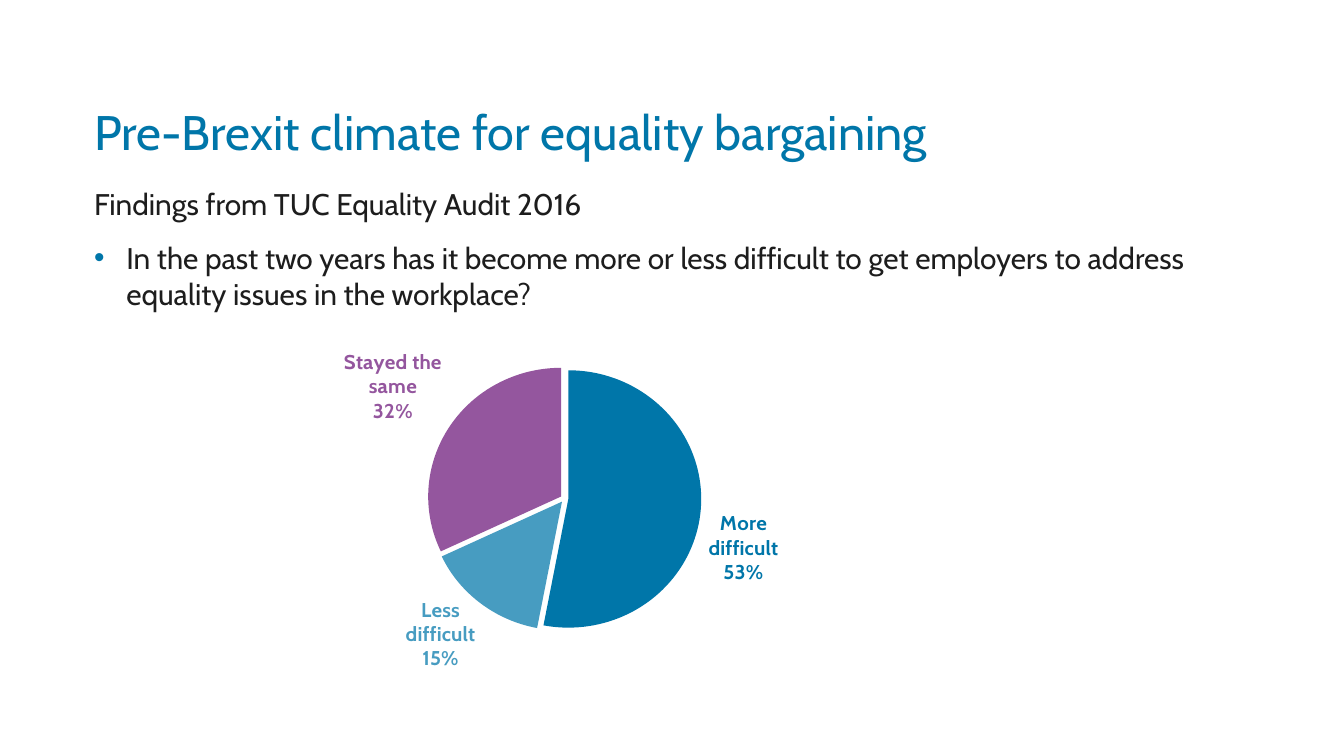
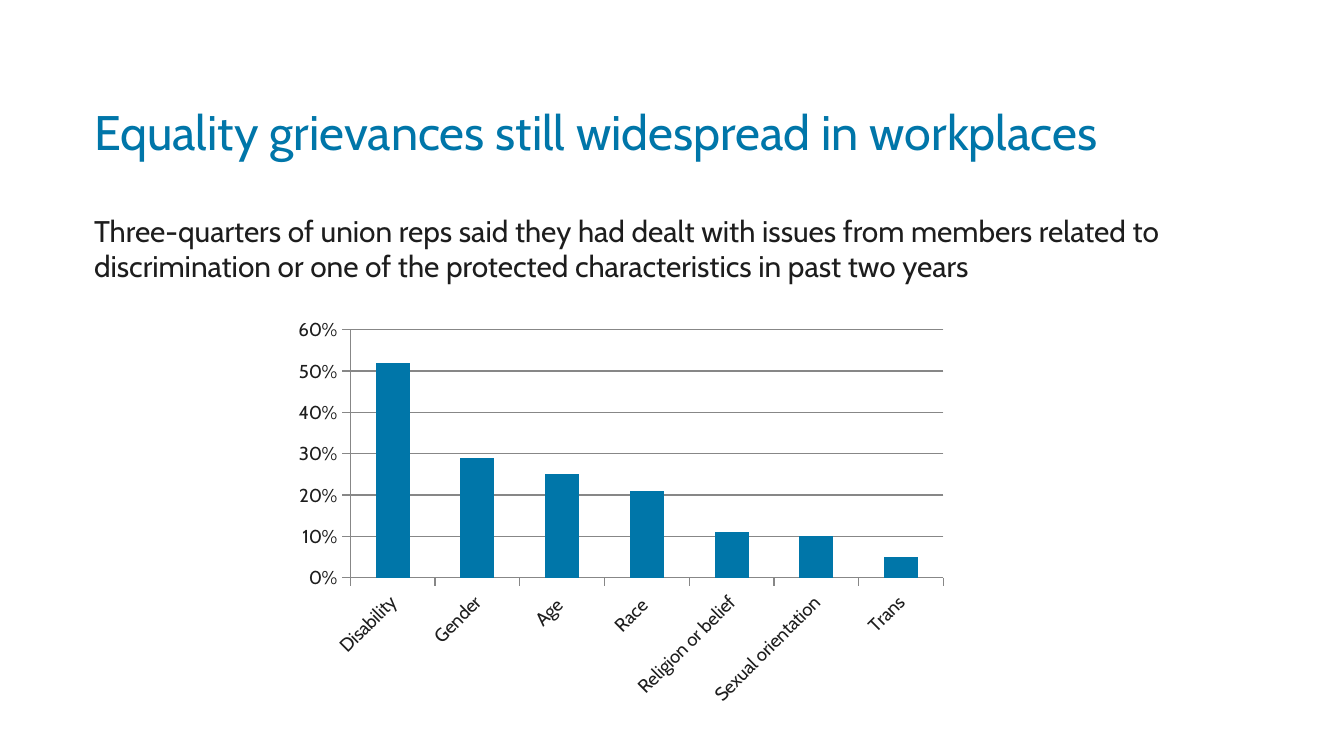
from dataclasses import dataclass
from typing import Any

import pptx
import pptx.chart.data
import pptx.dml.color
import pptx.enum.chart
import pptx.enum.text
import pptx.oxml
import pptx.oxml.ns
import pptx.util

FONT = "Cabin"
BLUE, SKY, PURPLE = "0076A9", "479CC1", "94569E"
INK, GREY, WHITE = "1D1D1D", "878787", "FFFFFF"

SLIDE_WIDTH = pptx.util.Inches(10)
SLIDE_HEIGHT = SLIDE_WIDTH * 9 // 16
CELL = SLIDE_WIDTH / 100  # the grid has square cells, 100 columns across
MARGIN, TEXT_COLUMNS, TEXT_END_ROW = 7, 84.2, 47.8

TITLE_FORMAT = {"size": 26, "color": BLUE}
BODY_FORMAT = {"size": 16, "color": INK}
CHART_FORMAT = {"size": 10, "color": INK}


@dataclass(frozen=True)
class Area:
    """A rectangle in grid columns and rows."""
    column: float
    row: float
    columns: float
    rows: float

    def lengths(self) -> list[int]:
        return [round(n * CELL) for n in (self.column, self.row, self.columns, self.rows)]


@dataclass(frozen=True)
class BodyLine:
    text: str
    bulleted: bool = False


@dataclass(frozen=True)
class PieSlice:
    name: str
    percent: int
    color: str


@dataclass(frozen=True)
class Bar:
    name: str
    share: float


TITLE_AREA = Area(MARGIN, 3.1, TEXT_COLUMNS, 8.8)
PIE_AREA = Area(21.3, 24, 41.4, 26.8)
PIE_PLOT = {"x": 0.25, "y": 1 / 8, "w": 0.5, "h": 0.76}
BARS_AREA = Area(21.2, 23.1, 50, 30)

CLIMATE_SLICES = [
    PieSlice("More difficult", 53, BLUE),
    PieSlice("Less difficult", 15, SKY),
    PieSlice("Stayed the same", 32, PURPLE),
]
GRIEVANCE_BARS = [
    Bar("Disability", 0.52),
    Bar("Gender", 0.29),
    Bar("Age ", 0.25),
    Bar("Race ", 0.21),
    Bar("Religion or belief", 0.11),
    Bar("Sexual orientation", 0.1),
    Bar("Trans", 0.05),
]


def rgb(color: str) -> pptx.dml.color.RGBColor:
    return pptx.dml.color.RGBColor.from_string(color)


def set_attributes(target: Any, values: dict[str, Any]) -> None:
    for name, value in values.items():
        setattr(target, name, value)


def set_font(font: Any, size: float, color: str, bold: bool = False) -> None:
    set_attributes(font, {"name": FONT, "size": pptx.util.Pt(size), "bold": bold})
    font.color.rgb = rgb(color)


def set_fill(target: Any, color: str) -> None:
    target.fill.solid()
    target.fill.fore_color.rgb = rgb(color)


def set_line(line: Any) -> None:
    line.width = pptx.util.Pt(0.75)
    line.color.rgb = rgb(GREY)


def xml_element(tag: str, **attributes: Any) -> Any:
    element = pptx.oxml.parse_xml(f"<{tag} {pptx.oxml.ns.nsdecls(tag.split(':')[0])}/>")
    for name, value in attributes.items():
        element.set(name, str(value))
    return element


def add_bullet(paragraph: Any) -> None:
    indent = pptx.util.Inches(0.24)
    properties = paragraph._p.get_or_add_pPr()
    for name, value in {"marL": indent, "indent": -indent, "lvl": 1}.items():
        properties.set(name, str(int(value)))
    color = xml_element("a:buClr")
    color.append(xml_element("a:srgbClr", val=BLUE))
    properties.append(color)
    properties.append(xml_element("a:buFont", typeface="Arial"))
    properties.append(xml_element("a:buChar", char="•"))


def add_text(slide: Any, area: Area, lines: list[BodyLine], text_format: dict[str, Any],
             anchor: Any = pptx.enum.text.MSO_ANCHOR.TOP, gap: float = 0) -> None:
    frame = slide.shapes.add_textbox(*area.lengths()).text_frame
    set_attributes(frame, {
        "word_wrap": True, "vertical_anchor": anchor,
        "margin_left": 0, "margin_top": 0, "margin_right": 0, "margin_bottom": 0,
    })
    for index, line in enumerate(lines):
        paragraph = frame.add_paragraph() if index else frame.paragraphs[0]
        paragraph.space_after = pptx.util.Pt(gap)
        if line.bulleted:
            add_bullet(paragraph)
        run = paragraph.add_run()
        run.text = line.text
        set_font(run.font, **text_format)


def add_text_slide(presentation: Any, title: str, body_row: float,
                   lines: list[BodyLine]) -> Any:
    slide = presentation.slides.add_slide(presentation.slide_layouts[6])
    set_fill(slide.background, WHITE)
    add_text(slide, TITLE_AREA, [BodyLine(title)], TITLE_FORMAT,
             pptx.enum.text.MSO_ANCHOR.BOTTOM)
    body_area = Area(MARGIN, body_row, TEXT_COLUMNS, TEXT_END_ROW - body_row)
    add_text(slide, body_area, lines, BODY_FORMAT, gap=10)
    return slide


def add_chart(slide: Any, area: Area, kind: Any, names: list[str], values: list[float],
              number_format: str) -> Any:
    data = pptx.chart.data.CategoryChartData(number_format=number_format)
    data.categories = names
    data.add_series("Series 1", values)
    chart = slide.shapes.add_chart(kind, *area.lengths(), data).chart
    set_attributes(chart, {"has_title": False, "has_legend": False})
    set_font(chart.font, **CHART_FORMAT)
    return chart


def place_plot(chart: Any, shares: dict[str, float]) -> None:
    """Fix the inner plot area as shares of the chart's size."""
    plot_area = chart.element.xpath(".//c:plotArea")[0]
    for automatic in plot_area.xpath("./c:layout"):
        plot_area.remove(automatic)
    manual = xml_element("c:manualLayout")
    manual.append(xml_element("c:layoutTarget", val="inner"))
    for axis in "xy":
        manual.append(xml_element(f"c:{axis}Mode", val="edge"))
    for name, share in shares.items():
        manual.append(xml_element(f"c:{name}", val=share))
    layout = xml_element("c:layout")
    layout.append(manual)
    plot_area.insert(0, layout)


def label_slice(point: Any, color: str) -> None:
    label = point.data_label
    set_font(label.font, 11, color, bold=True)
    label.position = pptx.enum.chart.XL_LABEL_POSITION.OUTSIDE_END


def add_pie(slide: Any, slices: list[PieSlice]) -> None:
    chart = add_chart(slide, PIE_AREA, pptx.enum.chart.XL_CHART_TYPE.PIE,
                      [part.name for part in slices],
                      [part.percent for part in slices], "General")
    place_plot(chart, PIE_PLOT)
    plot = chart.plots[0]
    plot.vary_by_categories = True
    chart.element.xpath(".//c:ser/c:cat")[0].addprevious(xml_element("c:explosion", val=3))
    for index, part in enumerate(slices):
        point = plot.series[0].points[index]
        set_fill(point.format, part.color)
        label_slice(point, part.color)
    shown = {"c:showVal": 0, "c:showCatName": 1, "c:showPercent": 1}
    for label in chart.element.xpath(".//c:dLbl"):
        for tag, value in shown.items():
            label.xpath(f"./{tag}")[0].set("val", str(value))
        separator = xml_element("c:separator")
        separator.text = "\n"
        label.append(separator)
        label.xpath("./c:txPr")[0].addprevious(
            xml_element("c:numFmt", formatCode="0%", sourceLinked=0))


def add_bars(slide: Any, bars: list[Bar]) -> None:
    chart = add_chart(slide, BARS_AREA, pptx.enum.chart.XL_CHART_TYPE.COLUMN_CLUSTERED,
                      [bar.name for bar in bars], [bar.share for bar in bars], "0%")
    plot = chart.plots[0]
    set_attributes(plot, {"vary_by_categories": False, "gap_width": 150})
    set_fill(plot.series[0].format, BLUE)
    for axis in (chart.category_axis, chart.value_axis):
        axis.major_tick_mark = pptx.enum.chart.XL_TICK_MARK.OUTSIDE
        set_line(axis.format.line)
        set_font(axis.tick_labels.font, **CHART_FORMAT)
    chart.element.xpath(".//c:catAx/c:txPr/a:bodyPr")[0].set("rot", str(-45 * 60000))
    set_attributes(chart.value_axis, {
        "minimum_scale": 0, "maximum_scale": 0.6, "major_unit": 0.1,
        "has_major_gridlines": True,
    })
    set_line(chart.value_axis.major_gridlines.format.line)
    set_attributes(chart.value_axis.tick_labels, {
        "number_format": "0%", "number_format_is_linked": False,
    })


def main() -> None:
    presentation = pptx.Presentation()
    set_attributes(presentation, {"slide_width": SLIDE_WIDTH, "slide_height": SLIDE_HEIGHT})

    climate = add_text_slide(
        presentation, "Pre-Brexit climate for equality bargaining", 13.8, [
            BodyLine("Findings from TUC Equality Audit 2016"),
            BodyLine("In the past two years has it become more or less difficult to get "
                     "employers to address equality issues in the workplace?", bulleted=True),
        ])
    add_pie(climate, CLIMATE_SLICES)

    grievances = add_text_slide(
        presentation, "Equality grievances still widespread in workplaces", 15.8, [
            BodyLine("Three-quarters of union reps said they had dealt with issues from "
                     "members related to discrimination or one of the protected "
                     "characteristics in past two years"),
        ])
    add_bars(grievances, GRIEVANCE_BARS)

    presentation.save("out.pptx")


if __name__ == "__main__":
    main()
